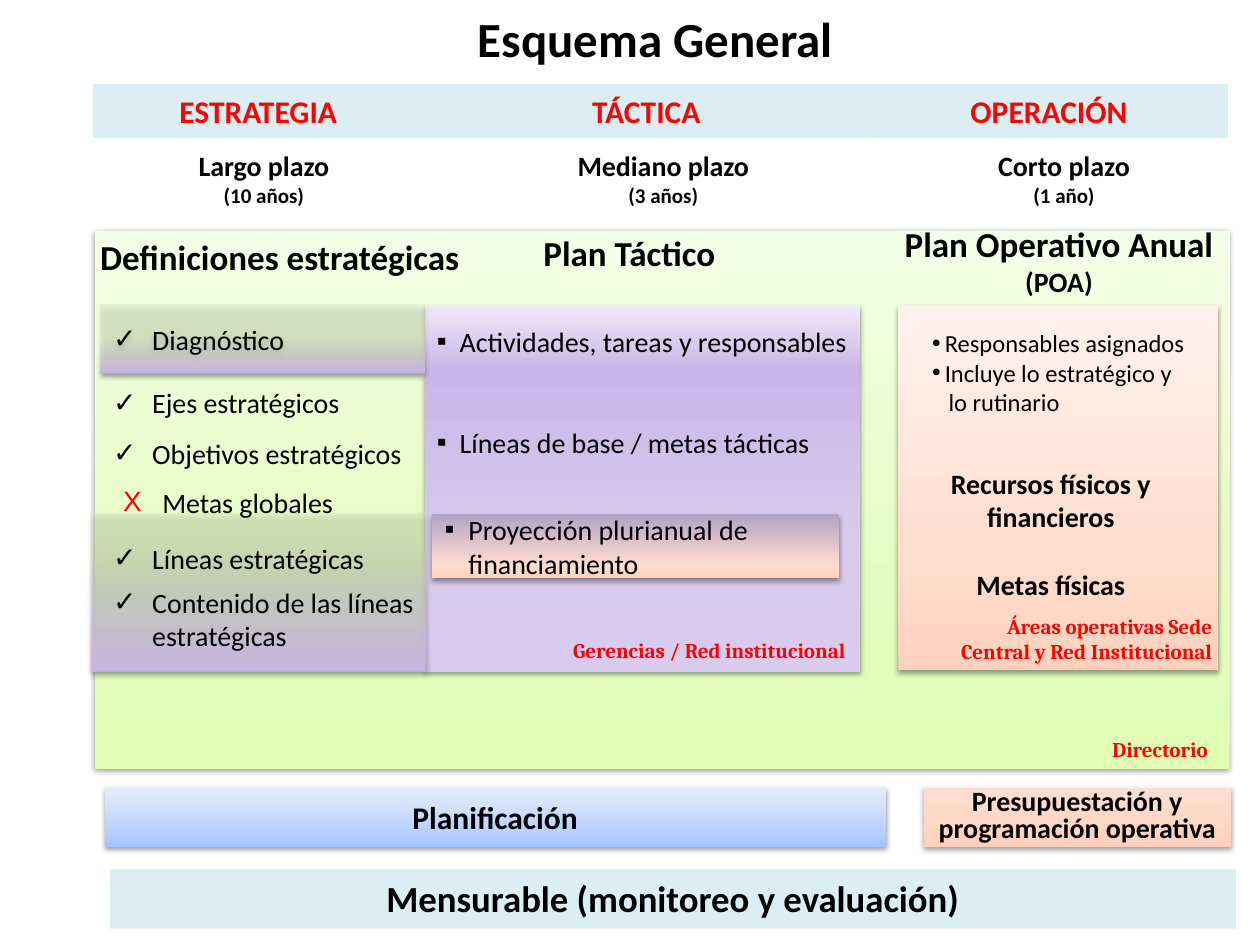
from dataclasses import dataclass
from typing import NamedTuple

from lxml.etree import SubElement
from pptx import Presentation
from pptx.dml.color import RGBColor
from pptx.enum.shapes import MSO_SHAPE
from pptx.enum.text import MSO_ANCHOR, PP_ALIGN
from pptx.oxml.ns import qn
from pptx.util import Inches, Pt


@dataclass(frozen=True)
class Theme:
    body_font: str = "Calibri"
    owner_font: str = "Cambria"
    ink: str = "000000"
    red: str = "FF0000"
    band: str = "DBEEF4"
    green: tuple = ((0, "DFFDB3"), (35, "E4FCC2"), (100, "F5FFE7"))
    blue: tuple = ((0, "A4C4FF"), (35, "BFD4FF"), (100, "E6EEFF"))
    violet: tuple = ((35, "D8CBEE"), (82, "C9B5E8"), (100, "F0EAF9"))
    budget: tuple = ((0, "FFD2BD"), (98, "FFDED0"), (100, "FFF2ED"))
    peach: tuple = ((0, "FFD2BD"), (35, "FFDED0"), (100, "FFF2ED"))
    funding: tuple = ((0, "FFD2BD"), (19, "FFDED0"), (100, "B3A2C7"))
    diagnosis: tuple = ((0, "C9B5E8"), (55, "D7E4BD", 35))
    lines: tuple = ((0, "C9B5E8"), (86, "D7E4BD", 35))
    title: int = 28
    measure: int = 21
    heading: int = 20
    stage: int = 18
    body: int = 16
    detail: int = 14
    small: int = 12


THEME = Theme()


class Box(NamedTuple):
    left: float
    top: float
    width: float
    height: float


class Stage(NamedTuple):
    name: str
    band: Box
    term: str
    years: str
    term_box: Box


class Item(NamedTuple):
    text: str
    bullet: str = "✓"
    bullet_color: str = THEME.ink
    hang: float = 0.31
    spacing: float = 1.0
    before: float = 0
    after: float = 0


STAGES = (
    Stage("ESTRATEGIA", Box(0.75, 0.68, 2.6, 0.4),
          "Largo plazo", "(10 años)", Box(1.43, 1.13, 1.33, 0.57)),
    Stage("TÁCTICA", Box(3.35, 0.68, 3.56, 0.4),
          "Mediano plazo", "(3 años)", Box(4.43, 1.13, 1.67, 0.57)),
    Stage("OPERACIÓN", Box(6.92, 0.68, 2.81, 0.4),
          "Corto plazo", "(1 año)", Box(7.31, 1.13, 2.27, 0.57)),
)

ITEM_LISTS = (
    (Box(3.37, 2.39, 3.54, 1.32), (
        Item("Actividades, tareas y responsables", "▪", hang=0.18, spacing=1.5),
        Item("Líneas de base / metas tácticas", "▪", hang=0.18, spacing=1.5, before=29))),
    (Box(0.8, 3.98, 2.79, 1.26), (
        Item("Líneas estratégicas", spacing=2.0, after=6),
        Item("Contenido de las líneas estratégicas"))),
    (Box(0.8, 2.88, 2.79, 0.91), (
        Item("Ejes estratégicos", spacing=1.5),
        Item("Objetivos estratégicos", spacing=1.5))),
    (Box(0.88, 3.67, 2.77, 0.46), (
        Item("Metas globales", "X", THEME.red, spacing=1.5),)),
)


def write(frame, text: str, *, size: float = THEME.body, bold: bool = True,
          color: str = THEME.ink, font: str = THEME.body_font,
          align=PP_ALIGN.CENTER, margin: float = 0, hang: float = 0,
          spacing: float = 1.0, before: float = 0, after: float = 0,
          bullet: str = "", bullet_color: str = THEME.ink) -> None:
    """Fill the frame's first paragraph, or append one when it is in use."""
    paragraph = frame.paragraphs[0]
    if paragraph.runs:
        paragraph = frame.add_paragraph()
    paragraph.alignment = align
    paragraph.line_spacing = spacing
    paragraph.space_before, paragraph.space_after = Pt(before), Pt(after)
    props = paragraph._p.get_or_add_pPr()
    props.set("marL", str(Inches(margin)))
    props.set("indent", str(-Inches(hang)))
    if bullet:
        tint = SubElement(props, qn("a:buClr"))
        SubElement(tint, qn("a:srgbClr"), val=bullet_color)
        SubElement(props, qn("a:buFont"), typeface="Arial")
        SubElement(props, qn("a:buChar"), char=bullet)
    run = paragraph.add_run()
    run.text = text
    run.font.size, run.font.bold, run.font.name = Pt(size), bold, font
    run.font.color.rgb = RGBColor.from_string(color)


def write_item(frame, item: Item) -> None:
    write(frame, item.text, bold=False, align=PP_ALIGN.LEFT, margin=item.hang,
          hang=item.hang, spacing=item.spacing, before=item.before,
          after=item.after, bullet=item.bullet, bullet_color=item.bullet_color)


def text_frame(slide, box: Box, wrap: bool = True):
    frame = slide.shapes.add_textbox(*map(Inches, box)).text_frame
    frame.word_wrap = wrap
    return frame


def rectangle(slide, box: Box):
    shape = slide.shapes.add_shape(MSO_SHAPE.RECTANGLE, *map(Inches, box))
    shape.shadow.inherit = False
    shape.line.fill.background()
    shape.text_frame.word_wrap = True
    return shape


def band(slide, box: Box, outlined: bool = False):
    shape = rectangle(slide, box)
    shape.fill.solid()
    shape.fill.fore_color.rgb = RGBColor.from_string(THEME.band)
    if outlined:
        shape.line.color.rgb = RGBColor.from_string(THEME.band)
        shape.line.width = Pt(2)
    shape.text_frame.vertical_anchor = MSO_ANCHOR.TOP
    return shape.text_frame


def panel(slide, box: Box, stops: tuple):
    """Add a shadowed rectangle whose gradient stops run from bottom to top."""
    shape = rectangle(slide, box)
    shape.fill.gradient()
    shape.fill.gradient_angle = 90
    props = shape._element.spPr
    stop_list = props.find(qn("a:gradFill")).find(qn("a:gsLst"))
    for old_stop in list(stop_list):
        stop_list.remove(old_stop)
    for position, color, *opacity in stops:
        stop = SubElement(stop_list, qn("a:gs"), pos=str(position * 1000))
        tint = SubElement(stop, qn("a:srgbClr"), val=color)
        for percent in opacity:
            SubElement(tint, qn("a:alpha"), val=str(percent * 1000))
    shadow = SubElement(props.find(qn("a:effectLst")), qn("a:outerShdw"),
                        blurRad=str(Pt(3.1)), dist=str(Pt(1.6)),
                        dir="5400000", rotWithShape="0")
    SubElement(SubElement(shadow, qn("a:srgbClr"), val=THEME.ink),
               qn("a:alpha"), val="38000")
    shape.text_frame.vertical_anchor = MSO_ANCHOR.MIDDLE
    return shape.text_frame


def owner(slide, box: Box, text: str, align=PP_ALIGN.LEFT, wrap: bool = False) -> None:
    write(text_frame(slide, box, wrap), text, size=THEME.small, color=THEME.red,
          font=THEME.owner_font, align=align)


def add_title(slide, text: str) -> None:
    title = slide.shapes.title
    title.left, title.top, title.width, title.height = map(Inches, (0.67, 0.02, 9.06, 1.04))
    title.text_frame.vertical_anchor = MSO_ANCHOR.TOP
    write(title.text_frame, text, size=THEME.title)


def add_panels(slide) -> None:
    panel(slide, Box(0.75, 1.83, 9.01, 4.27), THEME.green)
    write(panel(slide, Box(0.83, 6.25, 6.2, 0.47), THEME.blue),
          "Planificación", size=THEME.stage)
    write(panel(slide, Box(7.33, 6.25, 2.44, 0.47), THEME.budget),
          "Presupuestación y programación operativa", spacing=0.8)
    panel(slide, Box(3.37, 2.42, 3.46, 2.91), THEME.violet)
    write_item(panel(slide, Box(3.43, 4.08, 3.23, 0.51), THEME.funding),
               Item("Proyección plurianual de financiamiento", "▪", hang=0.19))
    panel(slide, Box(7.13, 2.42, 2.54, 2.9), THEME.peach)
    panel(slide, Box(0.73, 4.08, 2.65, 1.25), THEME.lines)
    write_item(panel(slide, Box(0.8, 2.42, 2.57, 0.54), THEME.diagnosis), Item("Diagnóstico"))


def add_operating_plan(slide) -> None:
    plan = text_frame(slide, Box(6.91, 1.72, 2.99, 1.92))
    write(plan, "Plan Operativo Anual", size=THEME.heading)
    write(plan, "(POA)")
    detail = dict(size=THEME.detail, bold=False, align=PP_ALIGN.JUSTIFY)
    write(plan, "Responsables asignados", margin=0.49, hang=0.1, bullet="•", before=17, **detail)
    write(plan, "Incluye lo estratégico y", margin=0.49, hang=0.1, bullet="•", **detail)
    write(plan, "lo rutinario", margin=0.52, **detail)
    resources = text_frame(slide, Box(7.2, 3.65, 2.28, 1.17))
    write(resources, "Recursos físicos y financieros")
    write(resources, "Metas físicas", before=19.5)


def main() -> None:
    deck = Presentation()
    deck.slide_width, deck.slide_height = Inches(10), Inches(7.5)
    slide = deck.slides.add_slide(deck.slide_layouts[5])
    add_title(slide, "Esquema General")
    add_panels(slide)
    for stage in STAGES:
        write(band(slide, stage.band, outlined=True), stage.name,
              size=THEME.stage, color=THEME.red)
        term = text_frame(slide, stage.term_box, wrap=False)
        write(term, stage.term)
        write(term, stage.years, size=THEME.small)
    for box, items in ITEM_LISTS:
        frame = text_frame(slide, box)
        for item in items:
            write_item(frame, item)
    for box, heading in ((Box(0.62, 1.82, 3.2, 0.44), "Definiciones estratégicas"),
                         (Box(3.37, 1.79, 3.25, 0.44), "Plan Táctico")):
        write(text_frame(slide, box), heading, size=THEME.heading)
    add_operating_plan(slide)
    owner(slide, Box(8.73, 5.8, 1, 0.3), "Directorio")
    owner(slide, Box(4.45, 5.01, 2.44, 0.3), "Gerencias / Red institucional")
    owner(slide, Box(7.44, 4.82, 2.28, 0.5),
          "Áreas operativas Sede Central y Red Institucional", PP_ALIGN.RIGHT, wrap=True)
    write(band(slide, Box(0.87, 6.9, 8.94, 0.47)),
          "Mensurable (monitoreo y evaluación)", size=THEME.measure)
    deck.save("out.pptx")


if __name__ == "__main__":
    main()
